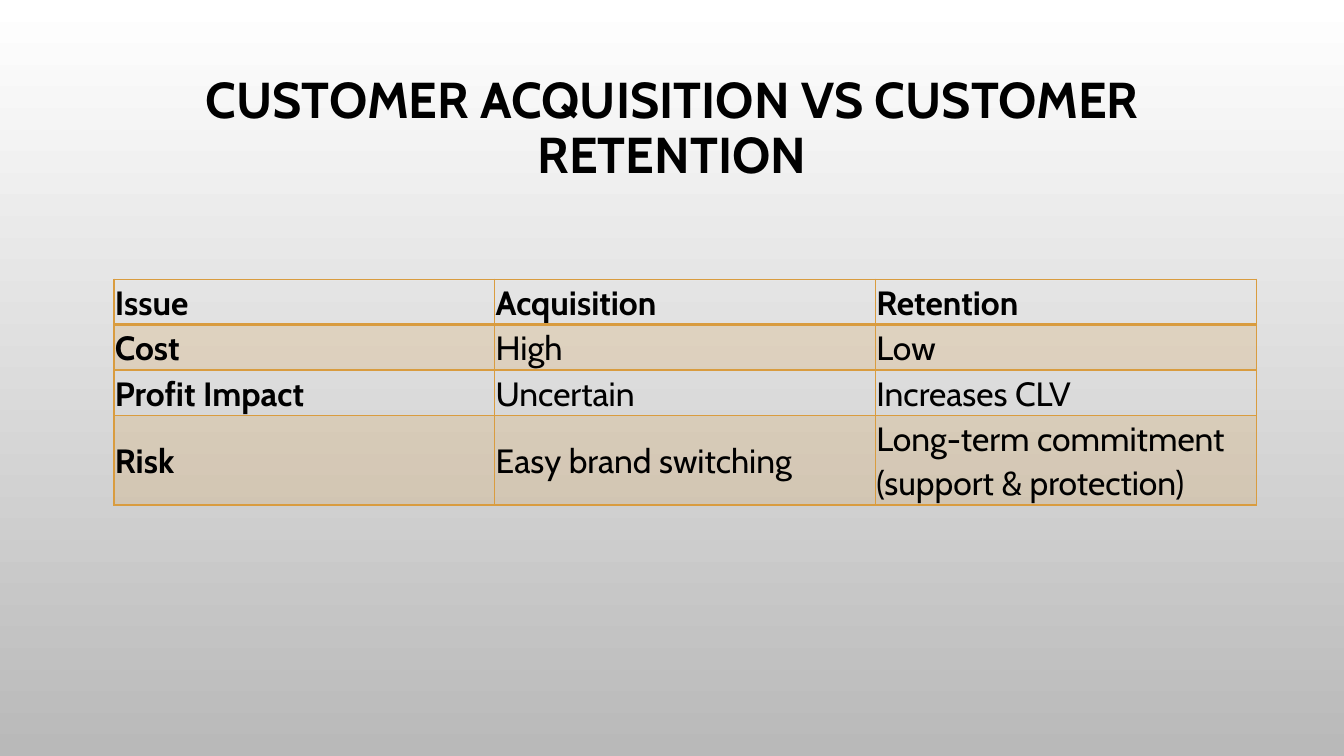
from lxml.etree import SubElement
from pptx import Presentation
from pptx.dml.color import RGBColor
from pptx.enum.text import MSO_ANCHOR, PP_ALIGN
from pptx.oxml import parse_xml
from pptx.oxml.ns import nsdecls, qn
from pptx.util import Inches, Pt

BLACK = RGBColor(0, 0, 0)
WHITE = RGBColor(255, 255, 255)
GREY = RGBColor(0xB9, 0xB9, 0xB9)
AMBER = RGBColor(0xD9, 0x9C, 0x3F)

TITLE = "CUSTOMER ACQUISITION VS CUSTOMER RETENTION"
COMPARISON = [
    ["Issue", "Acquisition", "Retention"],
    ["Cost", "High", "Low"],
    ["Profit Impact", "Uncertain", "Increases CLV"],
    ["Risk", "Easy brand switching", "Long-term commitment (support & protection)"],
]
ROW_HEIGHTS = [0.45, 0.45, 0.45, 0.89]

TITLE_FRAME = {
    "word_wrap": True,
    "vertical_anchor": MSO_ANCHOR.MIDDLE,
    "margin_bottom": Inches(0.59),
}
TITLE_PARAGRAPH = {"alignment": PP_ALIGN.CENTER, "line_spacing": 0.9}
CELL_FORMAT = {
    "vertical_anchor": MSO_ANCHOR.MIDDLE,
    "margin_left": Inches(0.01),
    "margin_top": Inches(0.01),
    "margin_right": Inches(0.01),
    "margin_bottom": Inches(0.01),
}
CELL_PARAGRAPH = {"line_spacing": 1.07, "space_after": Pt(8)}


def apply_format(target, values):
    for name, value in values.items():
        setattr(target, name, value)


def write_text(paragraph, text, paragraph_format, size, bold):
    run = paragraph.add_run()
    run.text = text
    apply_format(paragraph, paragraph_format)
    apply_format(run.font, {"name": "Cabin", "size": Pt(size), "bold": bold})
    run.font.color.rgb = BLACK


def paint_background(slide):
    fill = slide.background.fill
    fill.gradient()
    fill.gradient_angle = 270
    for stop, position, color in zip(fill.gradient_stops, (0, 1), (WHITE, GREY)):
        stop.position = position
        stop.color.rgb = color


def add_title(slide):
    title = slide.shapes.add_textbox(
        Inches(1), Inches(0.68), Inches(11.33), Inches(1.75)
    )
    apply_format(title.text_frame, TITLE_FRAME)
    write_text(title.text_frame.paragraphs[0], TITLE, TITLE_PARAGRAPH, 36, True)


def fill_cell(cell, shaded):
    if not shaded:
        cell.fill.background()
        return
    cell.fill.solid()
    cell.fill.fore_color.rgb = AMBER
    tint = cell._tc.get_or_add_tcPr().find(f".//{qn('a:srgbClr')}")
    SubElement(tint, qn("a:alpha"), val="20000")


def add_borders(cell, widths):
    properties = cell._tc.get_or_add_tcPr()
    for index, (side, width) in enumerate(widths.items()):
        border = parse_xml(
            f'<a:ln{side} {nsdecls("a")} w="{Pt(width)}"><a:solidFill>'
            f'<a:srgbClr val="{AMBER}"/></a:solidFill></a:ln{side}>'
        )
        properties.insert(index, border)


def add_comparison(slide):
    table = slide.shapes.add_table(
        len(COMPARISON), len(COMPARISON[0]),
        Inches(1.13), Inches(2.77), Inches(11.33), Inches(sum(ROW_HEIGHTS)),
    ).table
    apply_format(table, {"first_row": False, "horz_banding": False})
    for row, height in zip(table.rows, ROW_HEIGHTS):
        row.height = Inches(height)
    for row, labels in enumerate(COMPARISON):
        widths = {"L": 1, "R": 1, "T": 2 if row == 1 else 1, "B": 2 if row == 0 else 1}
        for column, label in enumerate(labels):
            cell = table.cell(row, column)
            apply_format(cell, CELL_FORMAT)
            write_text(
                cell.text_frame.paragraphs[0], label, CELL_PARAGRAPH,
                24, row == 0 or column == 0,
            )
            fill_cell(cell, row % 2 == 1)
            add_borders(cell, widths)


def main():
    presentation = Presentation()
    presentation.slide_width = Inches(13.33)
    presentation.slide_height = Inches(7.5)
    slide = presentation.slides.add_slide(presentation.slide_layouts[6])
    paint_background(slide)
    add_title(slide)
    add_comparison(slide)
    presentation.save("out.pptx")


if __name__ == "__main__":
    main()
